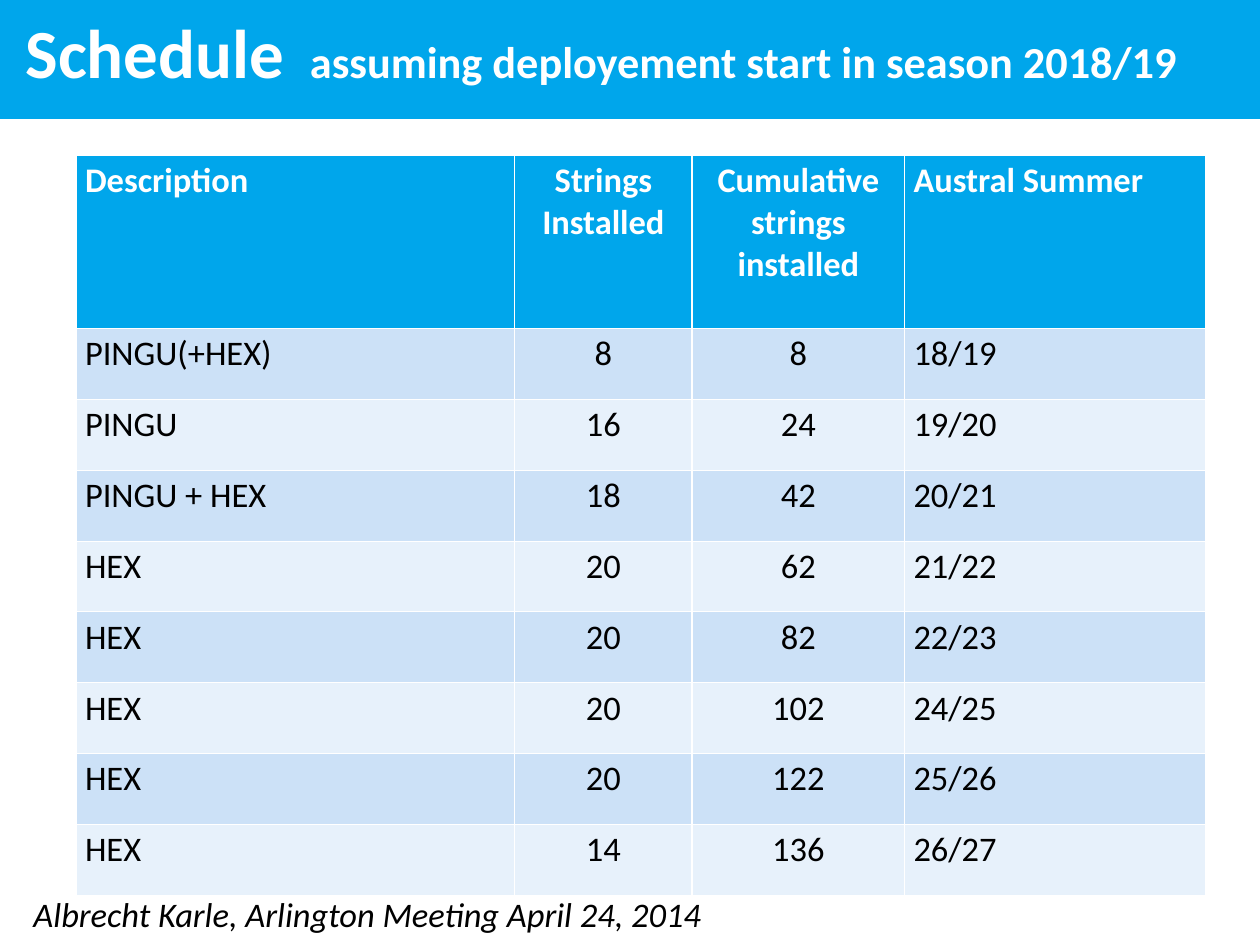
from pptx import Presentation
from pptx.dml.color import RGBColor
from pptx.enum import shapes, text
from pptx.util import Inches, Pt

TITLE = [("Schedule ", 56), (" assuming deployement start in season 2018/19", 36)]
HEADER = ("Description", "Strings Installed", "Cumulative strings installed", "Austral Summer")
SEASONS = [
    ("PINGU(+HEX)", 8, 8, "18/19"),
    ("PINGU", 16, 24, "19/20"),
    ("PINGU + HEX", 18, 42, "20/21"),
    ("HEX", 20, 62, "21/22"),
    ("HEX", 20, 82, "22/23"),
    ("HEX", 20, 102, "24/25"),
    ("HEX", 20, 122, "25/26"),
    ("HEX", 14, 136, "26/27"),
]
FOOTER = "Albrecht Karle, Arlington Meeting April 24, 2014"

COL_WIDTHS = (4.95, 2, 2.4, 3.4)
HEADER_HEIGHT, ROW_HEIGHT = 1.96, 0.8
LEFT, CENTER = text.PP_ALIGN.LEFT, text.PP_ALIGN.CENTER
COL_ALIGN = (LEFT, CENTER, CENTER, LEFT)

BLUE = RGBColor(0x00, 0xA6, 0xEB)
BANDS = (RGBColor(0xCC, 0xE1, 0xF7), RGBColor(0xE7, 0xF1, 0xFB))
WHITE = RGBColor(0xFF, 0xFF, 0xFF)
BLACK = RGBColor(0, 0, 0)


def style(font, size, color, bold=False, italic=False):
    font.name, font.size = "Calibri", Pt(size)
    font.bold, font.italic = bold, italic
    font.color.rgb = color


def add_bar(s, left, top, width, height, line_width):
    bar = s.shapes.add_shape(shapes.MSO_SHAPE.RECTANGLE, Inches(left), Inches(top),
                             Inches(width), Inches(height))
    bar.shadow.inherit = False
    bar.fill.solid()
    bar.fill.fore_color.rgb = BLUE
    bar.line.color.rgb = BLUE
    bar.line.width = Pt(line_width)
    return bar


def add_title(s):
    add_bar(s, 0, 0, 14.22, 1.33, 2)
    tf = add_bar(s, 0.19, 0.25, 14.03, 0.83, 0.75).text_frame
    tf.vertical_anchor = text.MSO_ANCHOR.MIDDLE
    p = tf.paragraphs[0]
    p.alignment = LEFT
    p.line_spacing = 0.8
    for words, size in TITLE:
        r = p.add_run()
        r.text = words
        style(r.font, size, WHITE, bold=True)


def add_schedule(s):
    rows = [HEADER] + SEASONS
    heights = [HEADER_HEIGHT] + [ROW_HEIGHT] * len(SEASONS)
    table = s.shapes.add_table(len(rows), len(HEADER), Inches(0.86), Inches(1.75),
                               Inches(sum(COL_WIDTHS)), Inches(sum(heights))).table
    for column, width in zip(table.columns, COL_WIDTHS):
        column.width = Inches(width)
    for i, (row, height) in enumerate(zip(rows, heights)):
        table.rows[i].height = Inches(height)
        is_header = i == 0
        for j, value in enumerate(row):
            cell = table.cell(i, j)
            cell.fill.solid()
            cell.fill.fore_color.rgb = BLUE if is_header else BANDS[(i - 1) % 2]
            cell.text = str(value)
            p = cell.text_frame.paragraphs[0]
            p.alignment = COL_ALIGN[j]
            style(p.font, 28, WHITE if is_header else BLACK, bold=is_header)


def add_footer(s):
    tf = s.shapes.add_textbox(Inches(0.28), Inches(10.03), Inches(8.06), Inches(0.57)).text_frame
    p = tf.paragraphs[0]
    p.text = FOOTER
    p.alignment = LEFT
    style(p.font, 28, BLACK, italic=True)


def main():
    prs = Presentation()
    prs.slide_width, prs.slide_height = Inches(14.22), Inches(10.67)
    s = prs.slides.add_slide(prs.slide_layouts[6])
    add_title(s)
    add_schedule(s)
    add_footer(s)
    prs.save("out.pptx")


if __name__ == "__main__":
    main()
